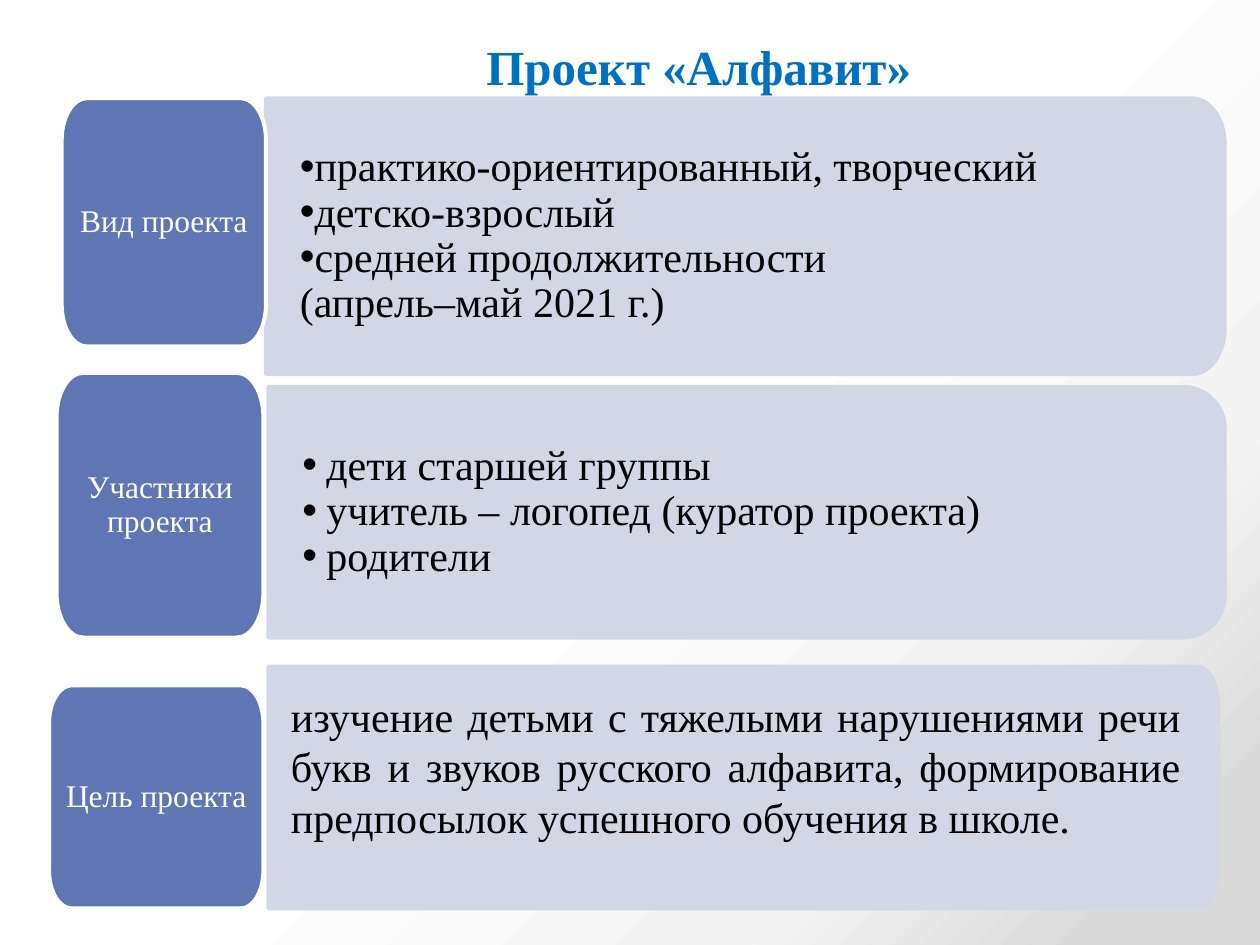
"""Build the project overview slide with three labelled panels."""
import dataclasses
import typing

import lxml.etree
import pptx
import pptx.dml.color
import pptx.enum.text
import pptx.oxml
import pptx.oxml.ns
import pptx.util

Inches = pptx.util.Inches
Align = pptx.enum.text.PP_ALIGN
Anchor = pptx.enum.text.MSO_ANCHOR
ARC_PULL = 0.55


@dataclasses.dataclass(frozen=True)
class Theme:
    font: str = "Times New Roman"
    title_color: str = "0070C0"
    text_color: str = "000000"
    label_color: str = "FFFFFF"
    tab_color: str = "6076B4"
    panel_color: str = "D2D6E5"
    title_size: int = 28
    text_size: int = 24
    label_size: int = 18
    outline: float = 2.25
    background: tuple = ((50, "FFFFFF"), (76, "F4F4F4"), (92, "DADADA"))


class Box(typing.NamedTuple):
    left: float
    top: float
    width: float
    height: float


class Corner(typing.NamedTuple):
    across: float
    down: float


@dataclasses.dataclass(frozen=True)
class Section:
    label: str
    tab: Box
    tab_corner: Corner
    panel: Box
    panel_corner: Corner


@dataclasses.dataclass(frozen=True)
class BulletList:
    lines: tuple
    box: Box
    insets: tuple
    hanging: float
    alignment: typing.Any
    plain_lines: int = 0


THEME = Theme()
SECTIONS = (
    Section("Вид проекта", Box(0.49, 0.78, 1.62, 1.97), Corner(0.2, 0.33),
            Box(2.11, 0.78, 7.61, 2.19), Corner(0.26, 0.36)),
    Section("Участники проекта", Box(0.45, 2.96, 1.64, 2.1), Corner(0.21, 0.35),
            Box(2.13, 3.07, 7.59, 1.99), Corner(0.33, 0.33)),
    Section("Цель проекта", Box(0.39, 5.44, 1.7, 1.77), Corner(0.18, 0.3),
            Box(2.13, 5.29, 7.54, 1.92), Corner(0.17, 0.32)),
)
LISTS = (
    BulletList(("практико-ориентированный, творческий", "детско-взрослый",
                "средней продолжительности", "(апрель–май 2021 г.)"),
               SECTIONS[0].panel, (0.27, 0.21, 0.35, 0.21), 0, Align.JUSTIFY, 1),
    BulletList(("дети старшей группы", "учитель – логопед (куратор проекта)", "родители"),
               SECTIONS[1].panel, (0.27, 0.23, 0.37, 0.23), 0.19, Align.LEFT),
)
GOAL = ("изучение детьми с тяжелыми нарушениями речи букв и звуков русского алфавита, "
        "формирование предпосылок успешного обучения в школе.")


def rgb(color: str) -> pptx.dml.color.RGBColor:
    return pptx.dml.color.RGBColor.from_string(color)


def place(shape, box: Box) -> None:
    shape.left, shape.top, shape.width, shape.height = map(Inches, box)


def write_text(shape, *lines: str, size: int, color: str, bold: bool = False,
               alignment=Align.CENTER, anchor=Anchor.MIDDLE, spacing: float = 1.0,
               insets: tuple = (0.1, 0.05, 0.1, 0.05)) -> None:
    frame = shape.text_frame
    frame.word_wrap = True
    frame.auto_size = pptx.enum.text.MSO_AUTO_SIZE.NONE
    frame.vertical_anchor = anchor
    frame.margin_left, frame.margin_top, frame.margin_right, frame.margin_bottom = map(Inches, insets)
    frame.text = "\n".join(lines)
    for paragraph in frame.paragraphs:
        paragraph.alignment = alignment
        paragraph.line_spacing = spacing
        paragraph.space_before = paragraph.space_after = pptx.util.Pt(0)
        font = paragraph.runs[0].font
        font.name, font.size, font.bold = THEME.font, pptx.util.Pt(size), bold
        font.color.rgb = rgb(color)


def set_bullet(paragraph, hanging: float, visible: bool) -> None:
    properties = paragraph._p.get_or_add_pPr()
    properties.set("marL", str(Inches(hanging)))
    properties.set("indent", str(-Inches(hanging)))
    tag = "a:buChar" if visible else "a:buNone"
    bullet = lxml.etree.SubElement(properties, pptx.oxml.ns.qn(tag))
    if visible:
        bullet.set("char", "•")


def curve_segment(shape, segment, start: tuple, vertex: tuple, end: tuple) -> None:
    curve = lxml.etree.Element(pptx.oxml.ns.qn("a:cubicBezTo"))
    controls = [tuple(a + ARC_PULL * (v - a) for a, v in zip(point, vertex)) for point in (start, end)]
    for x, y in (*controls, end):
        lxml.etree.SubElement(curve, pptx.oxml.ns.qn("a:pt"),
                              x=str(Inches(x) - shape.left), y=str(Inches(y) - shape.top))
    segment.getparent().replace(segment, curve)


def add_rounded(slide, box: Box, corner: Corner, fill: str, line: str, round_left: bool = True):
    right, bottom = box.left + box.width, box.top + box.height
    across, down = corner
    turns = (((box.left, box.top + down), (box.left, box.top), (box.left + across, box.top), round_left),
             ((right - across, box.top), (right, box.top), (right, box.top + down), True),
             ((right, bottom - down), (right, bottom), (right - across, bottom), True),
             ((box.left + across, bottom), (box.left, bottom), (box.left, bottom - down), round_left))
    points, curves = [], {}
    for start, vertex, end, is_round in turns:
        points.extend((start, end) if is_round else (vertex,))
        if is_round:
            curves[len(points) - 1] = (start, vertex, end)
    points = [(Inches(x), Inches(y)) for x, y in points]
    builder = slide.shapes.build_freeform(*points[0])
    builder.add_line_segments(points[1:], close=True)
    shape = builder.convert_to_shape()
    segments = list(shape.element.spPr.find(".//" + pptx.oxml.ns.qn("a:path")))
    for index, curve in curves.items():
        curve_segment(shape, segments[index], *curve)
    shape.shadow.inherit = False
    shape.fill.solid()
    shape.fill.fore_color.rgb = rgb(fill)
    shape.line.color.rgb = rgb(line)
    shape.line.width = pptx.util.Pt(THEME.outline)
    return shape


def add_section(slide, section: Section) -> None:
    add_rounded(slide, section.panel, section.panel_corner, THEME.panel_color,
                THEME.panel_color, round_left=False)
    tab = add_rounded(slide, section.tab, section.tab_corner, THEME.tab_color, THEME.label_color)
    write_text(tab, section.label, size=THEME.label_size, color=THEME.label_color,
               spacing=0.9, insets=(0.13, 0.1, 0.13, 0.1))


def fill_list(shape, content: BulletList) -> None:
    place(shape, content.box)
    write_text(shape, *content.lines, size=THEME.text_size, color=THEME.text_color,
               alignment=content.alignment, spacing=0.9, insets=content.insets)
    bulleted = len(content.lines) - content.plain_lines
    for index, paragraph in enumerate(shape.text_frame.paragraphs):
        set_bullet(paragraph, content.hanging, index < bulleted)


def paint_background(slide) -> None:
    fill = slide.background.fill
    fill.gradient()
    fill.gradient_angle = 315
    stops = slide.background._cSld.find(".//" + pptx.oxml.ns.qn("a:gsLst"))
    for stop in list(stops):
        stops.remove(stop)
    for position, color in THEME.background:
        stop = lxml.etree.SubElement(stops, pptx.oxml.ns.qn("a:gs"), pos=str(position * 1000))
        lxml.etree.SubElement(stop, pptx.oxml.ns.qn("a:srgbClr"), val=color)


def main() -> None:
    presentation = pptx.Presentation()
    presentation.slide_width, presentation.slide_height = Inches(10), Inches(7.5)
    slide = presentation.slides.add_slide(presentation.slide_layouts.get_by_name("Two Content"))
    paint_background(slide)
    title, *bodies = list(slide.placeholders)[:3]
    for section in SECTIONS:
        add_section(slide, section)
    for body, content in zip(bodies, LISTS):
        fill_list(body, content)
    place(title, Box(2.24, 0.24, 6.61, 0.57))
    write_text(title, "Проект «Алфавит»", size=THEME.title_size, color=THEME.title_color,
               bold=True, anchor=Anchor.TOP)
    for placeholder in (*bodies, title):
        slide.shapes.element.append(placeholder.element)
    goal = slide.shapes.add_textbox(*map(Inches, Box(2.21, 5.43, 7.26, 1.31)))
    write_text(goal, GOAL, size=THEME.text_size, color=THEME.text_color,
               alignment=Align.JUSTIFY, anchor=Anchor.TOP)
    presentation.save("out.pptx")


if __name__ == "__main__":
    main()
